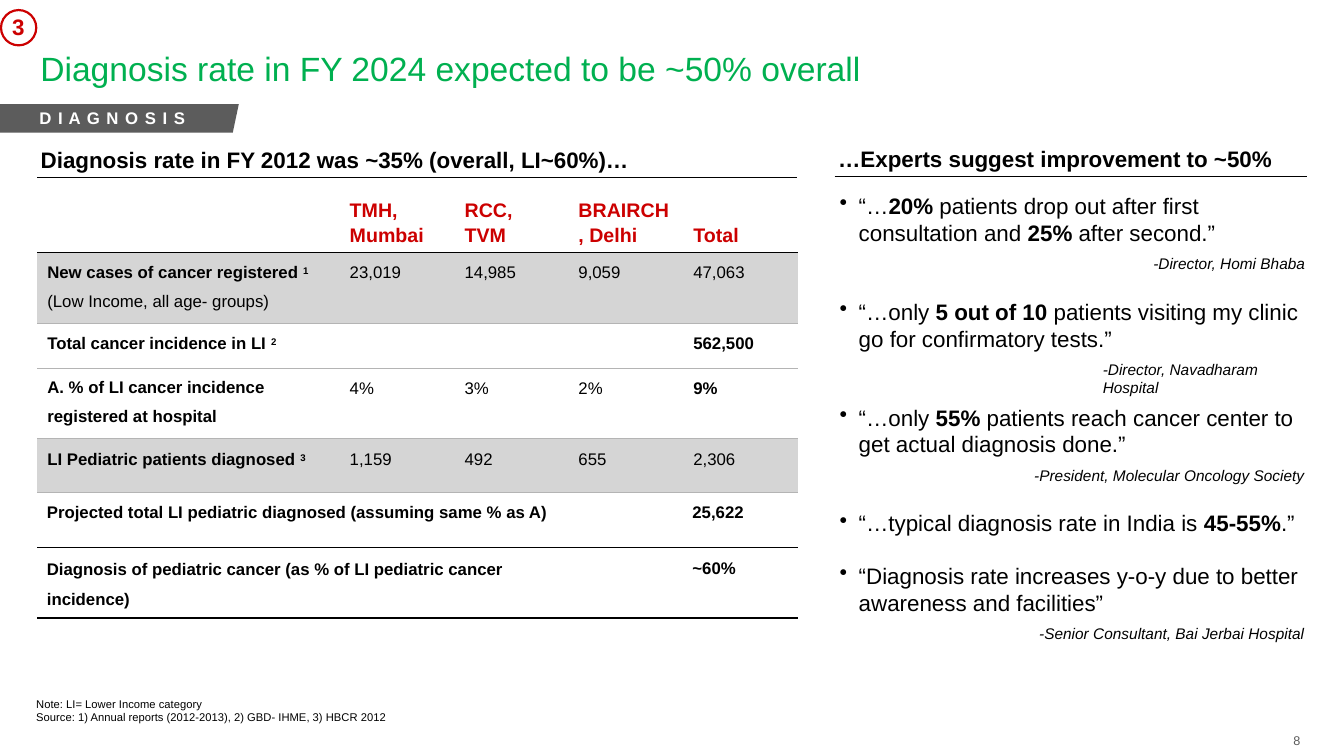
from lxml.etree import SubElement
from pptx import Presentation
from pptx.dml.color import RGBColor
from pptx.enum.shapes import MSO_CONNECTOR as CONNECTOR, MSO_SHAPE as SHAPE
from pptx.enum.text import MSO_ANCHOR as ANCHOR, PP_ALIGN as ALIGN
from pptx.oxml.ns import qn
from pptx.util import Pt

COLORS = {"black": "000000", "green": "00B050", "red": "CC0000", "gray": "5C5C5C",
          "band": "D5D5D5", "grid": "B4B4B4", "white": "FFFFFF"}
NO_GRID_STYLE = "{2D5ABB26-0587-4C30-8999-92F81FD0307C}"

COLUMN_WIDTHS = [208.8, 82.1, 73.4, 95.8, 83.5]
COLUMN_INDENTS = [7.2, 14.4, 14.4, 22.3, 8.6]
ROW_HEIGHTS = [16.6, 20.2, 50.4, 32.4, 50.4, 38.2]
ROWS = [
    ["", "TMH,", "RCC,", "BRAIRCH", ""],
    ["", "Mumbai", "TVM", ", Delhi", "Total"],
    ["*New cases of cancer registered *^1\n(Low Income, all age- groups)",
     "23,019", "14,985", "9,059", "47,063"],
    ["*Total cancer incidence in LI *^2", "", "", "", "*562,500*"],
    ["*A. % of LI cancer incidence registered at hospital*", "4%", "3%", "2%", "*9%*"],
    ["*LI Pediatric patients diagnosed *^3", "1,159", "492", "655", "2,306"],
]
HEADER_SPACING = [15.2, 16.1]
SHADED_ROWS = (2, 5)
TALL_LABEL_ROW = 4
ROW_RULES = [None, None, ("black", 1.5)] + [("grid", 0.75)] * 4

PROJECTIONS = [
    (214.2, 0, 1, "Projected total LI pediatric diagnosed (assuming same % as A)", "25,622"),
    (247.7, 6.8, 1.5, "Diagnosis of pediatric cancer (as % of LI pediatric cancer incidence)", "~60%"),
]
QUOTES = [
    (0, "“…*20%* patients drop out after first consultation and *25%* after second.”",
     None, "-Director, Homi Bhaba"),
    (75.6, "“…only *5 out of 10* patients visiting my clinic go for confirmatory tests.”",
     189.4, "-Director, Navadharam Hospital"),
    (151.2, "“…only *55%* patients reach cancer center to get actual diagnosis done.”",
     140.4, "-President, Molecular Oncology Society"),
    (226.8, "“…typical diagnosis rate in India is *45-55%*.”", None, ""),
    (264.2, "“Diagnosis rate increases y-o-y due to better awareness and facilities”",
     144, "-Senior Consultant, Bai Jerbai Hospital"),
]


def rgb(name):
    """Return the named colour."""
    return RGBColor.from_string(COLORS[name])


def write(paragraph, text, size, color="black", bold=False, italic=False):
    """Write text with *bold* parts and a ^raised mark at its end."""
    font = paragraph.font
    font.name, font.size, font.italic = "Arial", Pt(size), italic
    font.color.rgb = rgb(color)
    body, _, mark = text.partition("^")
    for index, part in enumerate(body.split("*")):
        if part:
            run = paragraph.add_run()
            run.text = part
            run.font.bold = bold or index % 2 == 1
    if mark:
        run = paragraph.add_run()
        run.text = mark
        run.font.bold = True
        run._r.get_or_add_rPr().set("baseline", "24000")


def indent(paragraph, left, first=0):
    """Set the left margin and first-line indent in points."""
    properties = paragraph._p.get_or_add_pPr()
    properties.set("marL", str(Pt(left)))
    properties.set("indent", str(Pt(first)))
    return properties


def add_frame(slide, left, top, width, height):
    """Add a wrapping text box and return its text frame."""
    frame = slide.shapes.add_textbox(Pt(left), Pt(top), Pt(width), Pt(height)).text_frame
    frame.word_wrap = True
    frame.margin_left = frame.margin_right = frame.margin_bottom = 0
    frame.margin_top = Pt(0.9)
    return frame


def add_line(slide, left, top, width, text, size, color="black", bold=False):
    """Add a box with one paragraph and return the paragraph."""
    paragraph = add_frame(slide, left, top, width, size * 1.3).paragraphs[0]
    write(paragraph, text, size, color, bold)
    return paragraph


def add_rule(slide, left, top, width, weight):
    """Draw a horizontal black line."""
    rule = slide.shapes.add_connector(
        CONNECTOR.STRAIGHT, Pt(left), Pt(top), Pt(left + width), Pt(top))
    rule.line.color.rgb = rgb("black")
    rule.line.width = Pt(weight)
    SubElement(rule._element.spPr, qn("a:effectLst"))


def add_header(slide, left, top):
    """Place the number badge, title and section tag."""
    badge = slide.shapes.add_shape(SHAPE.OVAL, Pt(left + 0.7), Pt(top + 7.2), Pt(25.2), Pt(25.2))
    badge.shadow.inherit = False
    badge.fill.background()
    badge.line.color.rgb = rgb("red")
    badge.line.width = Pt(1.56)
    add_line(slide, left + 8.6, top + 8.8, 10.8, "3", 16, "red", True)
    add_line(slide, left + 28.8, top + 33.4, 620, "Diagnosis rate in FY 2024 expected to be ~50% overall",
             24, "green")
    builder = slide.shapes.build_freeform(Pt(left + 170.6), Pt(top + 74.4))
    builder.add_line_segments([(Pt(left + x), Pt(top + y)) for x, y in
                               [(0, 74.4), (0, 94.8), (166.3, 94.8)]], close=True)
    tag = builder.convert_to_shape()
    tag.shadow.inherit = False
    tag.fill.solid()
    tag.fill.fore_color.rgb = rgb("gray")
    tag.line.fill.background()
    label = add_line(slide, left + 28.1, top + 76.4, 120, "D I A G N O S I S", 12, "white", True)
    label.runs[0]._r.get_or_add_rPr().set("spc", "70")


def add_heading(slide, left, top, width, text):
    """Place a column heading over its rule."""
    add_line(slide, left + 2.5, top, width - 2.5, text, 16, bold=True)
    add_rule(slide, left, top + 23.6, width, 0.72)


def set_border(cell, side, rule):
    """Draw one side of a cell."""
    if rule:
        color, weight = rule
        border = SubElement(cell._tc.get_or_add_tcPr(), qn("a:" + side), w=str(Pt(weight)))
        SubElement(SubElement(border, qn("a:solidFill")), qn("a:srgbClr"), val=COLORS[color])


def fill_cell(cell, row, column):
    """Write and format one cell of the diagnosis table."""
    header = row < 2
    tall = row == TALL_LABEL_ROW and column == 0
    set_border(cell, "lnT", ROW_RULES[row])
    set_border(cell, "lnB", ROW_RULES[row + 1])
    if row in SHADED_ROWS:
        cell.fill.solid()
        cell.fill.fore_color.rgb = rgb("band")
    else:
        cell.fill.background()
    cell.margin_left = cell.margin_right = cell.margin_bottom = 0
    cell.margin_top = Pt(0 if header else 0.7 if tall else 7.8)
    cell.vertical_anchor = ANCHOR.TOP
    for index, text in enumerate(ROWS[row][column].split("\n")):
        paragraph = cell.text_frame.add_paragraph() if index else cell.text_frame.paragraphs[0]
        indent(paragraph, COLUMN_INDENTS[column])
        if header:
            paragraph.line_spacing = Pt(HEADER_SPACING[row])
        elif tall:
            paragraph.line_spacing = 1.5
        if index:
            paragraph.space_before = Pt(7.2)
        write(paragraph, text, 14 if header else 12, "red" if header else "black", header)


def add_diagnosis_table(slide, left, top):
    """Place the hospital table with its two projection lines below."""
    width = sum(COLUMN_WIDTHS)
    table = slide.shapes.add_table(len(ROWS), len(COLUMN_WIDTHS), Pt(left), Pt(top),
                                   Pt(width), Pt(sum(ROW_HEIGHTS))).table
    table.first_row = table.horz_banding = False
    table._tbl.tblPr.find(qn("a:tableStyleId")).text = NO_GRID_STYLE
    for column, column_width in enumerate(COLUMN_WIDTHS):
        table.columns[column].width = Pt(column_width)
    for row, height in enumerate(ROW_HEIGHTS):
        table.rows[row].height = Pt(height)
        for column in range(len(COLUMN_WIDTHS)):
            fill_cell(table.cell(row, column), row, column)
    table.cell(0, 0).merge(table.cell(1, 0))
    for offset, drop, spacing, label, value in PROJECTIONS:
        paragraph = add_line(slide, left + 6.9, top + offset, 376 if spacing == 1 else 338, label, 12, bold=True)
        paragraph.line_spacing = spacing
        add_line(slide, left + 468, top + offset + drop, 60, value, 12, bold=True)
    for offset, weight in ((247.7, 1), (298.1, 1)):
        add_rule(slide, left, top + offset, width, weight)


def add_quotes(slide, left, top, width):
    """Place the expert quotes with their speakers."""
    for offset, quote, speaker_indent, speaker in QUOTES:
        frame = add_frame(slide, left, top + offset, width, 60 if speaker else 21)
        paragraph = frame.paragraphs[0]
        SubElement(indent(paragraph, 15.1, -13.7), qn("a:buChar"), char="•")
        write(paragraph, quote, 16)
        if speaker:
            paragraph = frame.add_paragraph()
            paragraph.space_before = Pt(6)
            if speaker_indent:
                indent(paragraph, speaker_indent)
            else:
                paragraph.alignment = ALIGN.RIGHT
            write(paragraph, speaker, 11, italic=True)


def add_footer(slide, left, top, width):
    """Place the note, the source and the page number."""
    frame = add_frame(slide, left, top, 330, 22)
    write(frame.paragraphs[0], "Note: LI= Lower Income category", 8)
    write(frame.add_paragraph(), "Source: 1) Annual reports (2012-2013), 2) GBD- IHME, 3) HBCR 2012", 8)
    add_line(slide, left + width - 12, top + 25.4, 12, "8", 9, "gray")


def main():
    """Build and save the diagnosis slide."""
    presentation = Presentation()
    presentation.slide_width, presentation.slide_height = Pt(960), Pt(540)
    slide = presentation.slides.add_slide(presentation.slide_layouts[6])
    add_header(slide, 0, 0)
    add_heading(slide, 26.6, 103.2, 543, "Diagnosis rate in FY 2012 was ~35% (overall, LI~60%)…")
    add_heading(slide, 596.2, 102.6, 337.7, "…Experts suggest improvement to ~50%")
    add_diagnosis_table(slide, 26.6, 143.3)
    add_quotes(slide, 598.3, 136.2, 334.1)
    add_footer(slide, 25.9, 497, 910)
    presentation.save("out.pptx")


if __name__ == "__main__":
    main()
